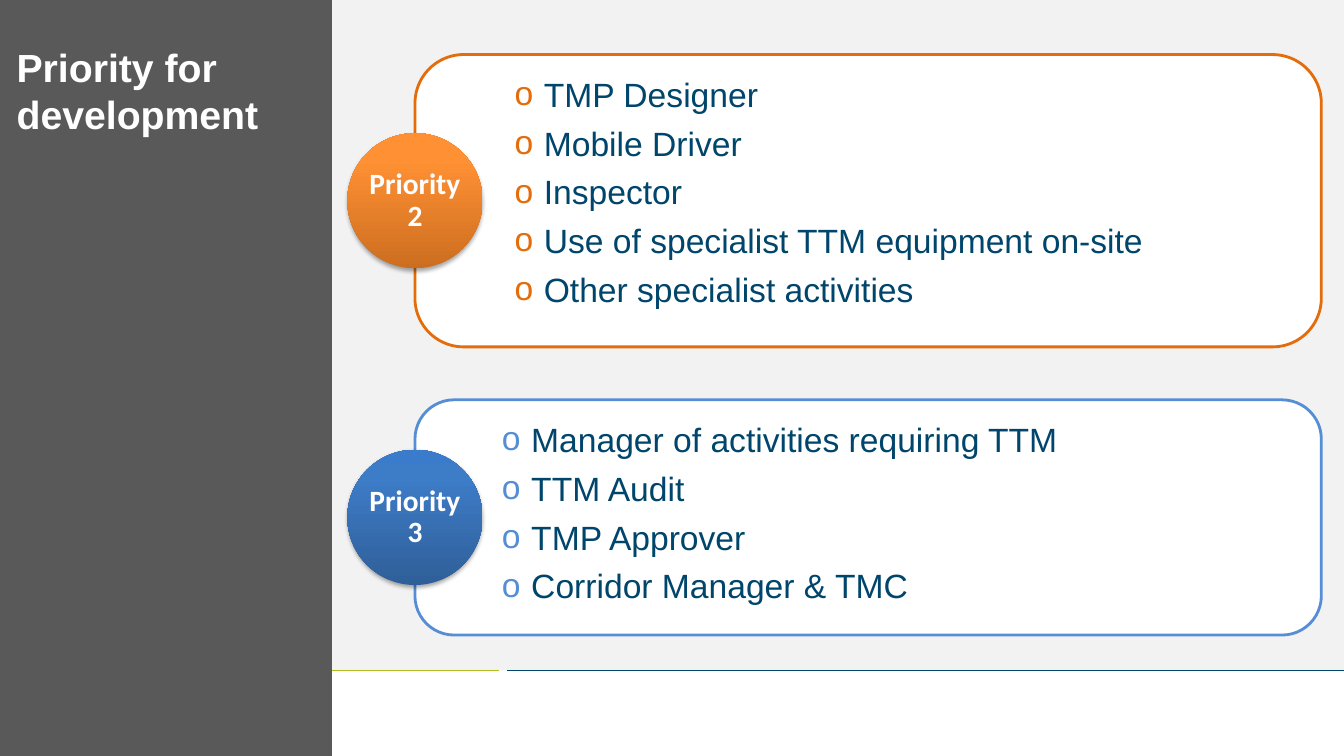
import pptx
import pptx.dml.color
import pptx.enum.shapes
import pptx.enum.text
import pptx.oxml
import pptx.oxml.ns
import pptx.util

SHAPES = pptx.enum.shapes.MSO_SHAPE
ALIGN = pptx.enum.text.PP_ALIGN
ANCHOR = pptx.enum.text.MSO_ANCHOR
WIDTH, HEIGHT = pptx.util.Inches(13.33), pptx.util.Inches(7.5)
COLUMNS, ROWS = 160, 90
SIDEBAR, FLOOR = 39.5, 79.8
NAMESPACE = pptx.oxml.ns.nsdecls("a")

TITLE_FONT = {"name": "Arial", "size": pptx.util.Pt(28), "bold": True}
BADGE_FONT = {"name": "Calibri", "size": pptx.util.Pt(21), "bold": True}
LIST_FONT = {"name": "Arial", "size": pptx.util.Pt(24)}

CARDS = [
    {
        "box": (49.4, 6.5, 107.9, 34.8),
        "indent": 6,
        "accent": "E46C0A",
        "gradient": {0: "CC6E20", 80: "FF9034", 100: "FF9136"},
        "badge": "Priority 2",
        "items": [
            "TMP Designer",
            "Mobile Driver",
            "Inspector",
            "Use of specialist TTM equipment on-site",
            "Other specialist activities",
        ],
    },
    {
        "box": (49.4, 47.6, 107.9, 28),
        "indent": 4.5,
        "accent": "558ED5",
        "gradient": {0: "2F5F99", 80: "3D7CC7", 100: "3A7CCB"},
        "badge": "Priority 3",
        "items": [
            "Manager of activities requiring TTM",
            "TTM Audit",
            "TMP Approver",
            "Corridor Manager & TMC",
        ],
    },
]


def color(hex_value):
    return pptx.dml.color.RGBColor.from_string(hex_value)


def place(left, top, width, height):
    return (
        round(left * WIDTH / COLUMNS),
        round(top * HEIGHT / ROWS),
        round(width * WIDTH / COLUMNS),
        round(height * HEIGHT / ROWS),
    )


def apply_format(target, values):
    for name, value in values.items():
        setattr(target, name, value)


def write(paragraph, text, font, hex_value):
    run = paragraph.add_run()
    run.text = text
    apply_format(run.font, font)
    run.font.color.rgb = color(hex_value)


def add_panel(slide, preset, box, fill, outline=None):
    shape = slide.shapes.add_shape(preset, *place(*box))
    shape.shadow.inherit = False
    shape.fill.solid()
    shape.fill.fore_color.rgb = color(fill)
    if outline:
        shape.line.color.rgb = color(outline)
        shape.line.width = pptx.util.Pt(2)
    else:
        shape.line.fill.background()


def add_text_frame(slide, box):
    frame = slide.shapes.add_textbox(*place(*box)).text_frame
    frame.word_wrap = True
    return frame


def add_rule(slide, start, end, hex_value):
    left, top, width, height = place(start, FLOOR, end - start, 0)
    connector = slide.shapes.add_connector(
        pptx.enum.shapes.MSO_CONNECTOR.STRAIGHT, left, top, left + width, top + height
    )
    connector.line.color.rgb = color(hex_value)
    connector.line.width = pptx.util.Pt(0.75)
    properties = connector._element.spPr
    properties.append(pptx.oxml.parse_xml(f"<a:effectLst {NAMESPACE}/>"))


def add_backdrop(slide):
    add_panel(slide, SHAPES.RECTANGLE, (SIDEBAR, 0, COLUMNS - SIDEBAR, FLOOR), "F2F2F2")
    add_panel(slide, SHAPES.RECTANGLE, (0, 0, SIDEBAR, ROWS), "595959")
    add_rule(slide, SIDEBAR, 59.4, "AFBD21")
    add_rule(slide, 60.4, COLUMNS, "00456A")


def add_title(slide, box, text):
    frame = add_text_frame(slide, box)
    write(frame.paragraphs[0], text, TITLE_FONT, "FFFFFF")


def add_badge(slide, center, middle, text, gradient):
    size = 16.1
    box = (center - size / 2, middle - size / 2, size, size)
    circle = slide.shapes.add_shape(SHAPES.OVAL, *place(*box))
    circle.line.fill.background()
    properties = circle._element.spPr
    stops = "".join(
        f'<a:gs pos="{position * 1000}"><a:srgbClr val="{value}"/></a:gs>'
        for position, value in gradient.items()
    )
    properties.insert(2, pptx.oxml.parse_xml(
        f'<a:gradFill {NAMESPACE} rotWithShape="1"><a:gsLst>{stops}</a:gsLst>'
        '<a:lin ang="16200000" scaled="0"/></a:gradFill>'
    ))
    properties.append(pptx.oxml.parse_xml(
        f'<a:effectLst {NAMESPACE}><a:outerShdw blurRad="{int(pptx.util.Pt(3.1))}" '
        f'dist="{int(pptx.util.Pt(1.8))}" dir="5400000" rotWithShape="0">'
        '<a:srgbClr val="000000"><a:alpha val="35000"/></a:srgbClr>'
        "</a:outerShdw></a:effectLst>"
    ))
    frame = circle.text_frame
    sides = ("left", "top", "right", "bottom")
    apply_format(frame, {f"margin_{side}": pptx.util.Pt(1) for side in sides})
    apply_format(frame, {"word_wrap": True, "vertical_anchor": ANCHOR.MIDDLE})
    paragraph = frame.paragraphs[0]
    write(paragraph, text, BADGE_FONT, "FFFFFF")
    apply_format(paragraph, {"alignment": ALIGN.CENTER, "line_spacing": 0.9})


def add_list(slide, box, items, accent):
    frame = add_text_frame(slide, box)
    for index, item in enumerate(items):
        paragraph = frame.paragraphs[0] if index == 0 else frame.add_paragraph()
        paragraph.level = 2
        properties = paragraph._p.get_or_add_pPr()
        properties.set("marL", str(int(pptx.util.Inches(0.68))))
        properties.set("indent", str(int(pptx.util.Inches(-0.29))))
        for bullet in (
            f'<a:buClr {NAMESPACE}><a:srgbClr val="{accent}"/></a:buClr>',
            f'<a:buFont {NAMESPACE} typeface="Arial"/>',
            f'<a:buChar {NAMESPACE} char="o"/>',
        ):
            properties.append(pptx.oxml.parse_xml(bullet))
        write(paragraph, item, LIST_FONT, "00456B")
        if index:
            paragraph.space_before = pptx.util.Pt(6)


def add_card(slide, box, indent, accent, gradient, badge, items):
    left, top, width, height = box
    add_panel(slide, SHAPES.ROUNDED_RECTANGLE, box, "FFFFFF", accent)
    add_badge(slide, left, top + height / 2, badge, gradient)
    inset = 1.7
    list_box = (left + indent, top + inset, 93.1, height - 2 * inset)
    add_list(slide, list_box, items, accent)


def main():
    presentation = pptx.Presentation()
    apply_format(presentation, {"slide_width": WIDTH, "slide_height": HEIGHT})
    slide = presentation.slides.add_slide(presentation.slide_layouts[6])
    add_backdrop(slide)
    add_title(slide, (0.8, 4.6, 38, 75.7), "Priority for development")
    for card in CARDS:
        add_card(slide, **card)
    presentation.save("out.pptx")


if __name__ == "__main__":
    main()
